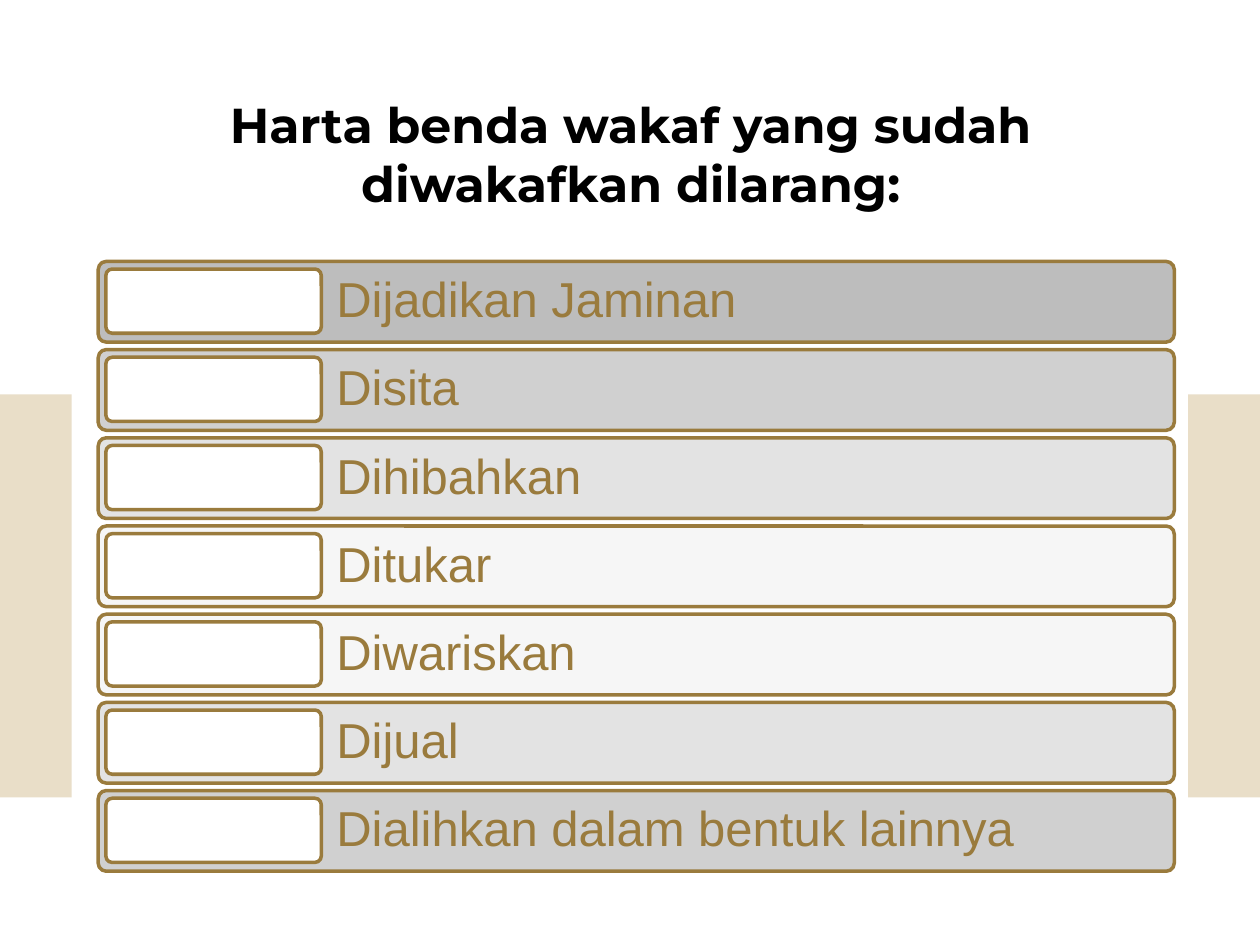
from pptx import Presentation
from pptx.dml.color import RGBColor
from pptx.enum.shapes import MSO_SHAPE
from pptx.enum.text import MSO_ANCHOR, PP_ALIGN
from pptx.util import Inches, Pt

COLORS = {
    "sand": "E9DEC8",
    "bronze": "9A7B3D",
    "black": "000000",
    "white": "FFFFFF",
    "gray_dark": "BDBDBD",
    "gray_mid": "D0D0D0",
    "gray_light": "E3E3E3",
    "gray_pale": "F6F6F6",
}

PROHIBITIONS = [
    ("Dijadikan Jaminan", "gray_dark"),
    ("Disita", "gray_mid"),
    ("Dihibahkan", "gray_light"),
    ("Ditukar", "gray_pale"),
    ("Diwariskan", "gray_pale"),
    ("Dijual", "gray_light"),
    ("Dialihkan dalam bentuk lainnya", "gray_mid"),
]
FIRST_ROW_TOP = 2.075
ROW_PITCH = 0.7
ROW_HEIGHT = 0.64


class SlideBuilder:
    """Holds the shared style and the slide being filled."""

    text_size = Pt(28)
    line_width = Pt(2)
    corner = 0.1

    def __init__(self, page):
        self.page = page

    def color(self, name):
        return RGBColor.from_string(COLORS[name])

    def shape(self, kind, left, top, width, height, fill):
        shape = self.page.shapes.add_shape(
            kind, Inches(left), Inches(top), Inches(width), Inches(height))
        shape.shadow.inherit = False
        shape.fill.solid()
        shape.fill.fore_color.rgb = self.color(fill)
        return shape

    def band(self, left, top, width, height):
        band = self.shape(MSO_SHAPE.RECTANGLE, left, top, width, height, "sand")
        band.line.fill.background()

    def panel(self, left, top, width, height, fill):
        panel = self.shape(
            MSO_SHAPE.ROUNDED_RECTANGLE, left, top, width, height, fill)
        panel.adjustments[0] = self.corner
        panel.line.color.rgb = self.color("bronze")
        panel.line.width = self.line_width

    def text(self, left, top, width, height, words, font, color, inset,
             anchor=MSO_ANCHOR.MIDDLE, align=PP_ALIGN.LEFT, bold=False, spacing=0.9):
        box = self.page.shapes.add_textbox(
            Inches(left), Inches(top), Inches(width), Inches(height))
        frame = box.text_frame
        frame.word_wrap = True
        frame.vertical_anchor = anchor
        frame.margin_left = frame.margin_right = Inches(inset)
        frame.margin_top = frame.margin_bottom = Inches(inset)
        frame.text = words
        paragraph = frame.paragraphs[0]
        paragraph.alignment = align
        paragraph.line_spacing = spacing
        span = paragraph.runs[0]
        span.font.name = font
        span.font.size = self.text_size
        span.font.bold = bold
        span.font.color.rgb = self.color(color)

    def row(self, top, words, fill):
        self.panel(0.78, top, 8.54, ROW_HEIGHT, fill)
        self.text(2.55, top, 6.77, ROW_HEIGHT, words, "Arial", "bronze", 0.12)
        self.panel(0.84, top + 0.06, 1.71, 0.51, "white")


def main():
    deck = Presentation()
    deck.slide_width = Inches(10)
    deck.slide_height = Inches(7.5)
    builder = SlideBuilder(deck.slides.add_slide(deck.slide_layouts[6]))

    for left in (0, 9.43):
        builder.band(left, 3.13, 0.57, 3.2)
    builder.text(0.79, 0.65, 8.43, 0.84,
                 "Harta benda wakaf yang sudah diwakafkan dilarang:",
                 "Montserrat", "black", 0.1, anchor=MSO_ANCHOR.TOP,
                 align=PP_ALIGN.CENTER, bold=True, spacing=1.0)
    for index, (words, fill) in enumerate(PROHIBITIONS):
        builder.row(FIRST_ROW_TOP + index * ROW_PITCH, words, fill)

    deck.save("out.pptx")


if __name__ == "__main__":
    main()
